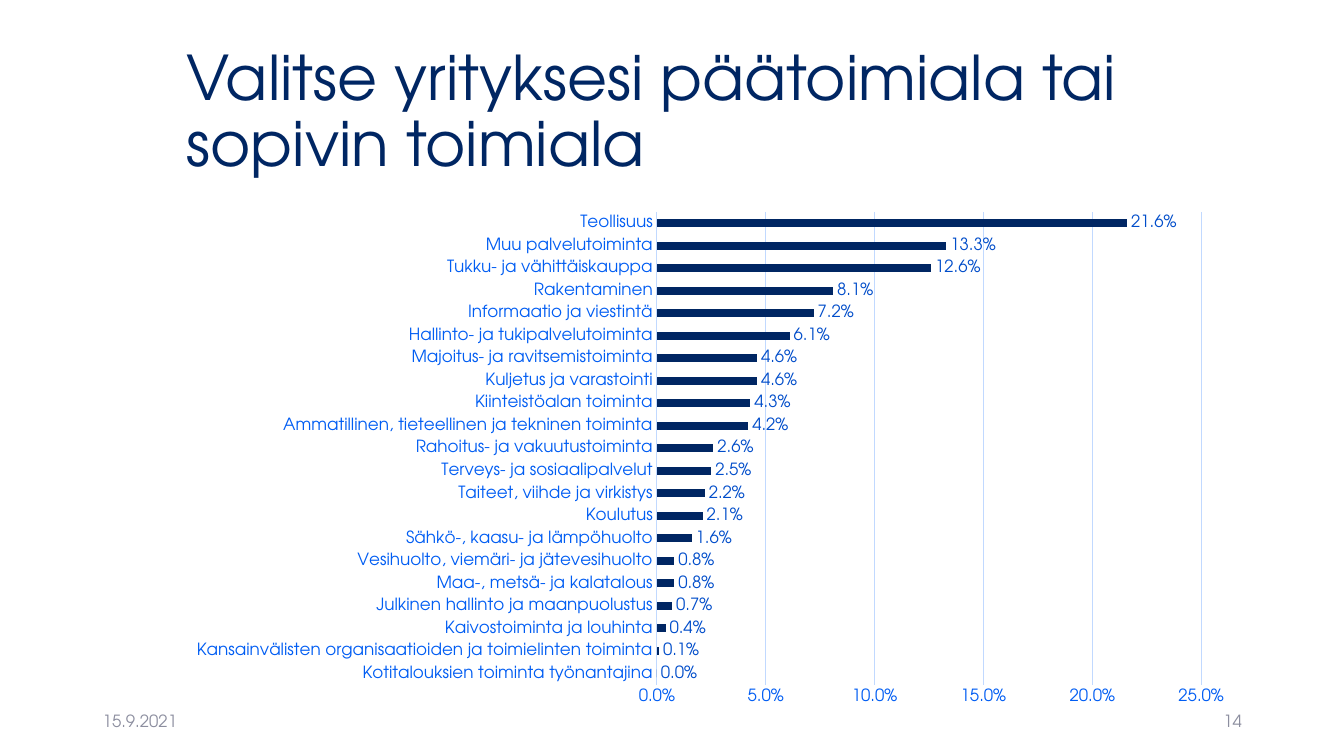
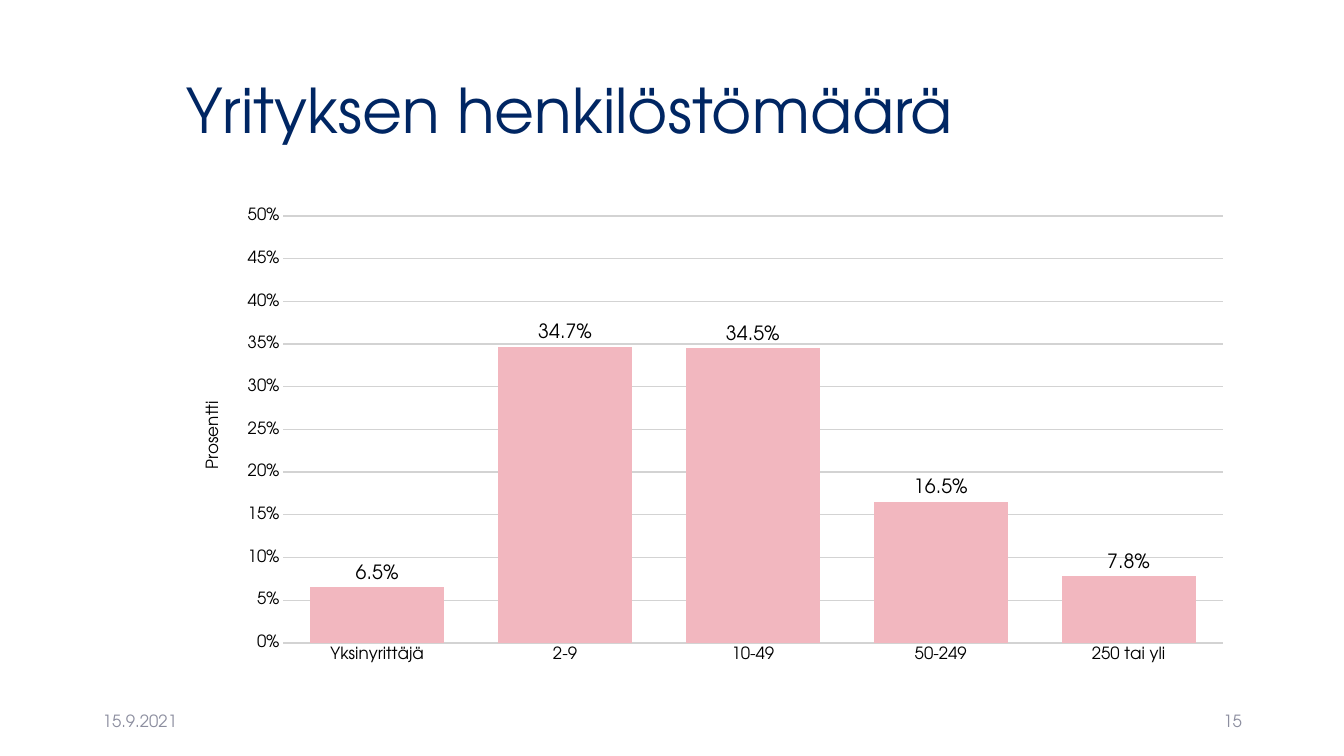
from dataclasses import dataclass
from typing import Optional

import lxml.etree
import pptx
import pptx.chart.axis
import pptx.chart.chart
import pptx.chart.data
import pptx.dml.color
import pptx.enum.chart
import pptx.enum.text
import pptx.oxml.ns
import pptx.slide
import pptx.text.text
import pptx.util

Cm = pptx.util.Cm
Pt = pptx.util.Pt
RGB = pptx.dml.color.RGBColor
Kind = pptx.enum.chart.XL_CHART_TYPE
Tick = pptx.enum.chart.XL_TICK_MARK
Align = pptx.enum.text.PP_ALIGN
qn = pptx.oxml.ns.qn

FACE = "TeX Gyre Adventor"
NAVY = RGB(0x00, 0x26, 0x63)
BLUE = RGB(0x00, 0x5D, 0xF3)
ROYAL = RGB(0x00, 0x4D, 0xCA)
PALE = RGB(0xC1, 0xD9, 0xFF)
GRAY = RGB(0x8C, 0x8E, 0x9F)
SILVER = RGB(0xD3, 0xD3, 0xD3)
PINK = RGB(0xF2, 0xB7, 0xBF)
BLACK = RGB(0x00, 0x00, 0x00)

DATE = "15.9.2021"
FIRST = 14
LEFT, WIDTH = 4.45, 26.9


@dataclass(frozen=True)
class Graph:
    """Data and look of one bar chart; plot is x, y, w, h as shares."""
    kind: Kind
    rows: dict[str, float]
    height: float
    plot: tuple[float, float, float, float]
    top: float
    axis_form: str
    gap: int
    bar: RGB
    text: RGB
    label: RGB
    label_size: int
    grid: RGB
    grid_width: float
    base: Optional[RGB] = None
    title: Optional[str] = None


@dataclass(frozen=True)
class Page:
    title: str
    graph: Graph


FIELDS = Graph(
    kind=Kind.BAR_CLUSTERED,
    rows={
        "Kotitalouksien toiminta työnantajina": 0,
        "Kansainvälisten organisaatioiden ja toimielinten toiminta": 0.001,
        "Kaivostoiminta ja louhinta": 0.004,
        "Julkinen hallinto ja maanpuolustus": 0.007,
        "Maa-, metsä- ja kalatalous": 0.008,
        "Vesihuolto, viemäri- ja jätevesihuolto": 0.008,
        "Sähkö-, kaasu- ja lämpöhuolto": 0.016,
        "Koulutus": 0.021,
        "Taiteet, viihde ja virkistys": 0.022,
        "Terveys- ja sosiaalipalvelut": 0.025,
        "Rahoitus- ja vakuutustoiminta": 0.026,
        "Ammatillinen, tieteellinen ja tekninen toiminta": 0.042,
        "Kiinteistöalan toiminta": 0.043,
        "Kuljetus ja varastointi": 0.046,
        "Majoitus- ja ravitsemistoiminta": 0.046,
        "Hallinto- ja tukipalvelutoiminta": 0.061,
        "Informaatio ja viestintä": 0.072,
        "Rakentaminen": 0.081,
        "Tukku- ja vähittäiskauppa": 0.126,
        "Muu palvelutoiminta": 0.133,
        "Teollisuus": 0.216,
    },
    height=12.95, plot=(0.45, 0.02, 0.51, 0.92), top=0.25,
    axis_form="0.0%", gap=182, bar=NAVY, text=BLUE, label=ROYAL,
    label_size=12, grid=PALE, grid_width=0.75, base=PALE,
)
STAFF = Graph(
    kind=Kind.COLUMN_CLUSTERED,
    rows={
        "Yksinyrittäjä": 0.065,
        "2-9": 0.347,
        "10-49": 0.345,
        "50-249": 0.165,
        "250 tai yli": 0.078,
    },
    height=12.09, plot=(0.1, 0.03, 0.88, 0.89), top=0.5,
    axis_form="0%", gap=40, bar=PINK, text=BLACK, label=BLACK,
    label_size=14, grid=SILVER, grid_width=1, title="Prosentti",
)
PAGES = [
    Page("Valitse yrityksesi päätoimiala tai sopivin toimiala", FIELDS),
    Page("Yrityksen henkilöstömäärä", STAFF),
]


def set_font(font: pptx.text.text.Font, size: float, color: RGB) -> None:
    font.name = FACE
    font.size = Pt(size)
    font.bold = False
    font.color.rgb = color


def add_text(slide: pptx.slide.Slide, text: str,
             box: tuple[float, float, float, float], size: float, color: RGB,
             align: Align = Align.LEFT, lead: float = 1.0) -> None:
    frame = slide.shapes.add_textbox(*map(Cm, box)).text_frame
    frame.word_wrap = True
    frame.vertical_anchor = pptx.enum.text.MSO_ANCHOR.MIDDLE
    frame.text = text
    para = frame.paragraphs[0]
    para.alignment = align
    para.line_spacing = lead
    set_font(para.runs[0].font, size, color)


def set_plot(chart: pptx.chart.chart.Chart,
             box: tuple[float, float, float, float]) -> None:
    """Fix the inner plot area to shares of the chart frame."""
    area = chart.element.find(f".//{qn('c:plotArea')}")
    for old in area.findall(qn("c:layout")):
        area.remove(old)
    layout = lxml.etree.Element(qn("c:layout"))
    area.insert(0, layout)
    manual = lxml.etree.SubElement(layout, qn("c:manualLayout"))
    marks = {"layoutTarget": "inner", "xMode": "edge", "yMode": "edge"}
    marks.update(zip("xywh", map(str, box)))
    for tag, val in marks.items():
        lxml.etree.SubElement(manual, qn(f"c:{tag}")).set("val", val)


def set_line(line: pptx.dml.line.LineFormat, color: Optional[RGB],
             width: float = 0.75) -> None:
    if color is None:
        line.fill.background()
    else:
        line.color.rgb = color
        line.width = Pt(width)


def style_axes(chart: pptx.chart.chart.Chart, graph: Graph) -> None:
    cat, val = chart.category_axis, chart.value_axis
    for axis, base in ((cat, graph.base), (val, None)):
        axis.major_tick_mark = axis.minor_tick_mark = Tick.NONE
        set_font(axis.tick_labels.font, 12, graph.text)
        set_line(axis.format.line, base)
    cat.has_major_gridlines = False
    val.has_major_gridlines = True
    set_line(val.major_gridlines.format.line, graph.grid, graph.grid_width)
    val.minimum_scale, val.maximum_scale = 0, graph.top
    val.major_unit = 0.05
    val.tick_labels.number_format = graph.axis_form
    val.tick_labels.number_format_is_linked = False
    if graph.title:
        frame = val.axis_title.text_frame
        frame.text = graph.title
        set_font(frame.paragraphs[0].runs[0].font, 12, graph.text)


def add_graph(slide: pptx.slide.Slide, graph: Graph) -> None:
    data = pptx.chart.data.CategoryChartData(number_format="0.0%")
    data.categories = list(graph.rows)
    data.add_series("Series 1", list(graph.rows.values()))
    box = map(Cm, (LEFT, 5.08, WIDTH, graph.height))
    chart = slide.shapes.add_chart(graph.kind, *box, data).chart
    chart.has_title = chart.has_legend = False
    set_font(chart.font, 12, graph.text)
    set_plot(chart, graph.plot)
    style_axes(chart, graph)

    plot = chart.plots[0]
    plot.vary_by_categories = False
    plot.gap_width = graph.gap
    fill = plot.series[0].format.fill
    fill.solid()
    fill.fore_color.rgb = graph.bar
    plot.has_data_labels = True
    labels = plot.data_labels
    labels.show_value = True
    labels.position = pptx.enum.chart.XL_LABEL_POSITION.OUTSIDE_END
    labels.number_format = "0.0%"
    labels.number_format_is_linked = False
    set_font(labels.font, graph.label_size, graph.label)


def main() -> None:
    deck = pptx.Presentation()
    deck.slide_width, deck.slide_height = Cm(33.87), Cm(19.05)
    blank = deck.slide_layouts[6]
    for number, page in enumerate(PAGES, FIRST):
        slide = deck.slides.add_slide(blank)
        add_text(slide, page.title, (LEFT, 1.02, WIDTH, 3.68), 44, NAVY,
                 lead=0.9)
        add_text(slide, DATE, (2.34, 17.65, 7.62, 1.02), 12, GRAY)
        add_text(slide, str(number), (23.93, 17.65, 7.62, 1.02), 12, GRAY,
                 Align.RIGHT)
        add_graph(slide, page.graph)
    deck.save("out.pptx")


if __name__ == "__main__":
    main()
